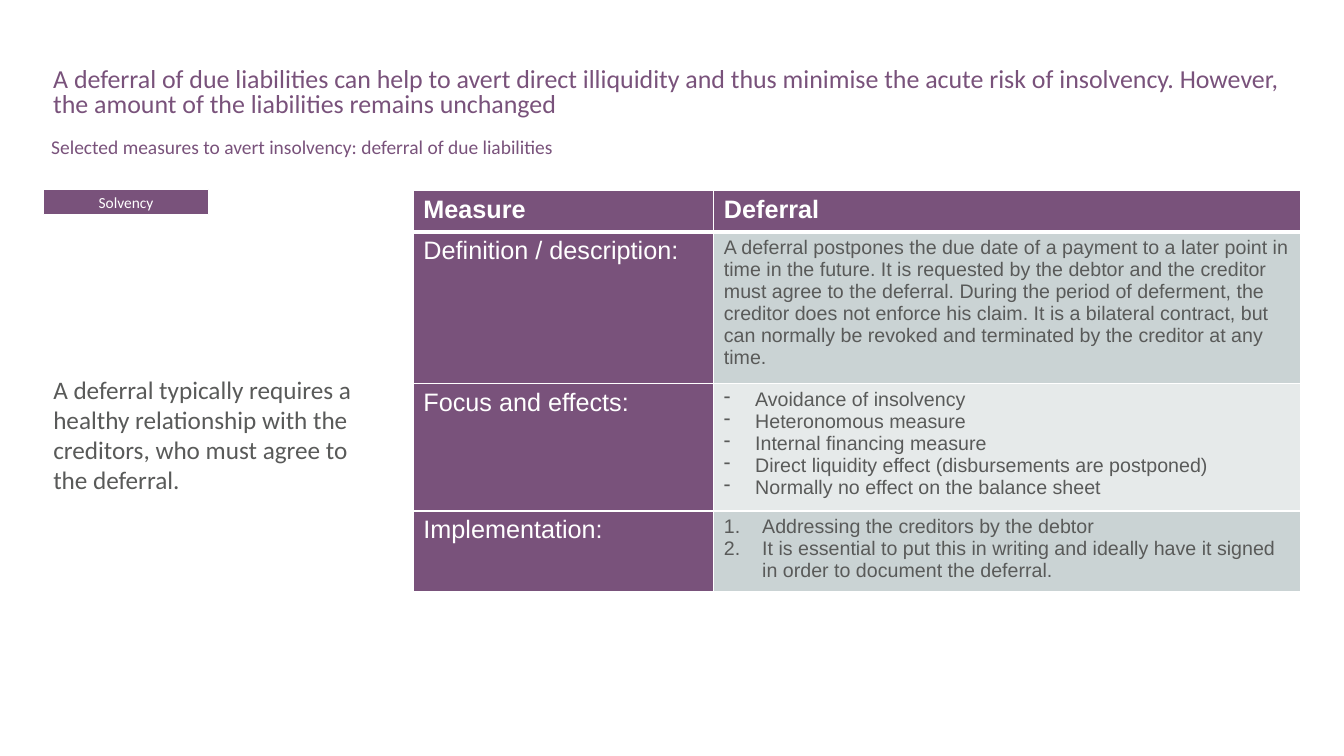
from lxml.etree import SubElement
from pptx import Presentation
from pptx.dml.color import RGBColor
from pptx.enum.shapes import MSO_SHAPE
from pptx.enum.text import MSO_ANCHOR, PP_ALIGN
from pptx.oxml.ns import qn
from pptx.util import Pt

PX = 9144  # 100 px to the inch
PLUM, GREY, WHITE = "79527B", "595A59", "FFFFFF"
DARK, LIGHT = "CAD3D4", "E6EAEA"

TITLE = ("A deferral of due liabilities can help to avert direct illiquidity and thus "
         "minimise the acute risk of insolvency. However, the amount of the liabilities "
         "remains unchanged")
SUB = "Selected measures to avert insolvency: deferral of due liabilities"
NOTE = ("A deferral typically requires a healthy relationship with the creditors, "
        "who must agree to the deferral.")
HEAD = ("Measure", "Deferral")
# label, paragraphs, bullet tag, bullet attributes, indent, fill, row height
ROWS = [
    ("Definition / description:", [
        "A deferral postpones the due date of a payment to a later point in time in the "
        "future. It is requested by the debtor and the creditor must agree to the deferral. "
        "During the period of deferment, the creditor does not enforce his claim. It is a "
        "bilateral contract, but can normally be revoked and terminated by the creditor at "
        "any time."], None, {}, 0, DARK, 140),
    ("Focus and effects:", [
        "Avoidance of insolvency",
        "Heteronomous measure",
        "Internal financing measure",
        "Direct liquidity effect (disbursements are postponed)",
        "Normally no effect on the balance sheet"],
        "a:buChar", {"char": "-"}, 31, LIGHT, 118),
    ("Implementation:", [
        "Addressing the creditors by the debtor",
        "It is essential to put this in writing and ideally have it signed in order to "
        "document the deferral."],
        "a:buAutoNum", {"type": "arabicPeriod"}, 38, DARK, 75),
]


def px(*sizes):
    return [size * PX for size in sizes]


def rgb(code):
    return RGBColor.from_string(code)


def paint(fill, code):
    fill.solid()
    fill.fore_color.rgb = rgb(code)


def solid(node, tag, code):
    """Add a colour element under node."""
    SubElement(SubElement(node, qn(tag)), qn("a:srgbClr"), val=code)


def bullet(para, tag, attrs, indent, color):
    props = para._p.get_or_add_pPr()
    props.set("marL", str(indent * PX))
    props.set("indent", str(-indent * PX))
    SubElement(SubElement(props, qn("a:buClr")), qn("a:srgbClr"), val=color)
    SubElement(props, qn(tag), **attrs)


def write(frame, *texts, size=18, color=GREY, font="Calibri", bold=False,
          align=PP_ALIGN.LEFT, space=None, tag=None, attrs=None, indent=0):
    frame.word_wrap = True
    for i, text in enumerate(texts):
        para = frame.add_paragraph() if i else frame.paragraphs[0]
        para.alignment = align
        if space:
            para.line_spacing = space
        if tag:
            bullet(para, tag, attrs, indent, color)
        run = para.add_run()
        run.text = text
        run.font.size, run.font.bold, run.font.name = Pt(size), bold, font
        run.font.color.rgb = rgb(color)


def label(slide, box, text, anchor=MSO_ANCHOR.TOP, **style):
    frame = slide.shapes.add_textbox(*px(*box)).text_frame
    frame.vertical_anchor = anchor
    write(frame, text, **style)


def header(slide, x, y, w):
    label(slide, (x, y, w, 64), TITLE, size=18.5, color=PLUM, space=0.8)
    label(slide, (x - 2, y + 72, w + 2, 28), SUB, size=13.9, color=PLUM, space=0.7)


def sidebar(slide, x, y, w, h):
    label(slide, (x, y, w, h), NOTE, anchor=MSO_ANCHOR.MIDDLE)
    tag = slide.shapes.add_shape(MSO_SHAPE.RECTANGLE, *px(x, y + 9, 164, 25))
    tag.shadow.inherit = False
    paint(tag.fill, PLUM)
    tag.line.color.rgb, tag.line.width = rgb(WHITE), Pt(1)
    tag.text_frame.vertical_anchor = MSO_ANCHOR.MIDDLE
    write(tag.text_frame, "Solvency", size=11, color=WHITE, align=PP_ALIGN.CENTER)


def edge(cell, **widths):
    """Draw white borders; widths in points by side."""
    props = cell._tc.get_or_add_tcPr()
    for side in "LRTB":
        line = SubElement(props, qn("a:ln" + side), w=str(Pt(widths.get(side, 1))))
        solid(line, "a:solidFill", WHITE)


def measures(slide, x, y, w, h):
    shape = slide.shapes.add_table(len(ROWS) + 1, 2, *px(x, y, w, h))
    table = shape.table
    for col, width in zip(table.columns, px(298, w - 298)):
        col.width = width
    heights = [h - sum(row[-1] for row in ROWS)] + [row[-1] for row in ROWS]
    for row, height in zip(table.rows, px(*heights)):
        row.height = height

    def put(r, c, fill, *texts, **style):
        cell = table.cell(r, c)
        edge(cell, T=3 if r == 1 else 1, B=1 if r else 3)
        paint(cell.fill, fill)
        write(cell.text_frame, *texts, font="Arial", **style)

    for c, text in enumerate(HEAD):
        put(0, c, PLUM, text, color=WHITE, bold=True)
    for r, (name, texts, tag, attrs, indent, fill, _) in enumerate(ROWS, 1):
        put(r, 0, PLUM, name, color=WHITE)
        put(r, 1, fill, *texts, size=14, tag=tag, attrs=attrs, indent=indent)


def main():
    deck = Presentation()
    deck.slide_width, deck.slide_height = px(1333, 750)
    slide = deck.slides.add_slide(deck.slide_layouts[6])
    sidebar(slide, 43, 179, 349, 504)
    header(slide, 43, 63, 1254)
    measures(slide, 410, 189, 880, 374)
    deck.save("out.pptx")


if __name__ == "__main__":
    main()
